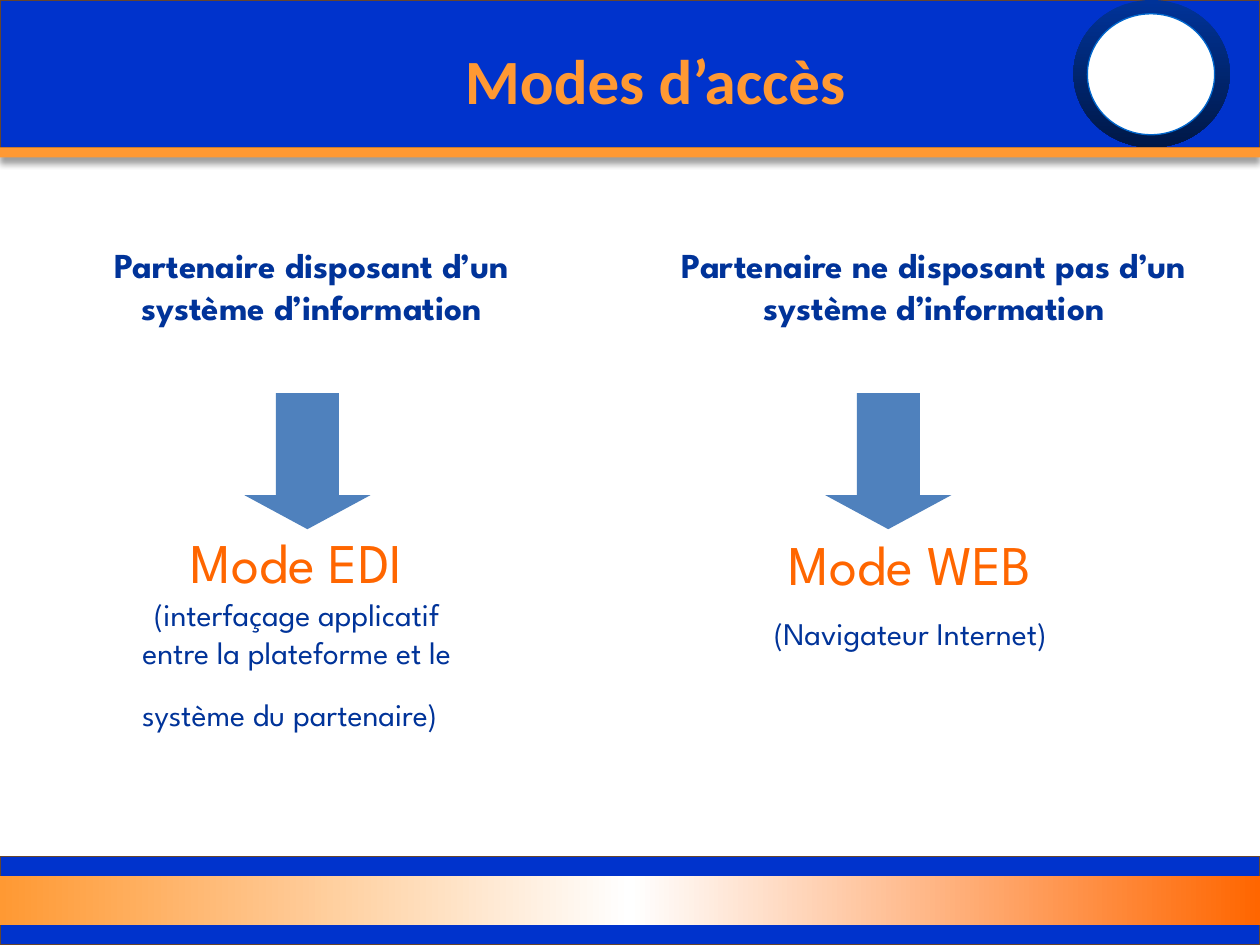
from lxml.etree import SubElement
from pptx import Presentation
from pptx.dml.color import RGBColor
from pptx.enum.shapes import MSO_SHAPE as Shape
from pptx.enum.text import MSO_ANCHOR as Anchor, PP_ALIGN as Align
from pptx.oxml.ns import qn
from pptx.util import Inches, Pt

WIDTH, HEIGHT = 10, 7.5
BLUE, NAVY, ORANGE, AMBER = "0033CC", "003399", "FF6600", "FF9933"
FONT = "League Spartan"
TITLE = "Modes d’accès"
BANDS = [
    (Shape.RECTANGLE, (0, 6.8, WIDTH, 0.7), BLUE, "67452D"),
    (Shape.RECTANGLE, (0, 6.95, WIDTH, 0.39), (0, [AMBER, "FFFFFF", ORANGE]), None),
    (Shape.RECTANGLE, (0, 0, WIDTH, 1.17), BLUE, "67452D"),
    (Shape.OVAL, (8.52, 0, 1.24, 1.17), (90, [NAVY, "001847"]), None),
    (Shape.OVAL, (8.63, 0.11, 1.01, 0.96), "FFFFFF", "0066CC"),
]
RULE = (0, 1.17, WIDTH, 0.08)
TEXTS = [
    ((0.39, 1.88, 4.17, 0.77),
     [[("Partenaire disposant d’un système d’information", 20, NAVY, True)]]),
    ((5, 1.88, 4.83, 0.77),
     [[("Partenaire ne disposant pas d’un système d’information", 20, NAVY, True)]]),
    ((0.94, 4.14, 2.83, 2.39),
     [[("Mode EDI ", 32, ORANGE, False),
       ("(interfaçage applicatif entre la plateforme et le système du partenaire)",
        18, NAVY, False),
       (" ", 32, ORANGE, False)]]),
    ((5.39, 4.15, 3.67, 1.09),
     [[("Mode WEB", 32, ORANGE, False)],
      [("(Navigateur Internet)", 18, NAVY, False)]]),
]
ARROW_LEFTS = [1.94, 6.55]


def color(value):
    return RGBColor.from_string(value)


def add_gradient(shape, angle, colors):
    shape.fill.gradient()
    gradient = shape.fill._xPr.find(qn("a:gradFill"))
    stops = gradient.find(qn("a:gsLst"))
    stops.clear()
    for index, value in enumerate(colors):
        position = str(100000 * index // (len(colors) - 1))
        stop = SubElement(stops, qn("a:gs"), pos=position)
        SubElement(stop, qn("a:srgbClr"), val=value)
    gradient.find(qn("a:lin")).set("ang", str(angle * 60000))


def add_shape(page, kind, area, fill, line=None):
    shape = page.shapes.add_shape(kind, *map(Inches, area))
    shape.shadow.inherit = False
    if isinstance(fill, tuple):
        add_gradient(shape, *fill)
    else:
        shape.fill.solid()
        shape.fill.fore_color.rgb = color(fill)
    if line:
        shape.line.color.rgb = color(line)
        shape.line.width = Pt(0.75)
    else:
        shape.line.fill.background()
    return shape


def add_shadow(shape):
    effects = shape._element.spPr.find(qn("a:effectLst"))
    shadow = SubElement(effects, qn("a:outerShdw"), blurRad=str(Pt(4)),
                        dist=str(Pt(3)), dir="5400000", rotWithShape="0")
    tint = SubElement(shadow, qn("a:srgbClr"), val="000000")
    SubElement(tint, qn("a:alpha"), val="40000")


def set_font(font, name, size, value, bold):
    font.name, font.size, font.bold = name, Pt(size), bold
    font.color.rgb = color(value)


def add_text(page, area, paragraphs):
    frame = page.shapes.add_textbox(*map(Inches, area)).text_frame
    frame.word_wrap = True
    for index, spans in enumerate(paragraphs):
        para = frame.add_paragraph() if index else frame.paragraphs[0]
        para.alignment = Align.CENTER
        if index:
            para.space_before = Pt(10)
        for text, *style in spans:
            span = para.add_run()
            span.text = text
            set_font(span.font, FONT, *style)


def add_title(page):
    title = page.shapes.title
    title.left, title.top, title.width, title.height = map(Inches, (1.8, 0.16, 6.8, 0.94))
    title.text_frame.text = TITLE
    title.text_frame.vertical_anchor = Anchor.MIDDLE
    para = title.text_frame.paragraphs[0]
    para.alignment = Align.CENTER
    set_font(para.font, "Calibri", 36, AMBER, True)
    page.shapes._spTree.append(title._element)


def main():
    """Build the access modes slide."""
    deck = Presentation()
    deck.slide_width, deck.slide_height = Inches(WIDTH), Inches(HEIGHT)
    page = deck.slides.add_slide(deck.slide_layouts[5])
    for band in BANDS:
        add_shape(page, *band)
    add_shadow(add_shape(page, Shape.RECTANGLE, RULE, AMBER))
    for area, paragraphs in TEXTS:
        add_text(page, area, paragraphs)
    for left in ARROW_LEFTS:
        arrow = add_shape(page, Shape.DOWN_ARROW, (left, 3.12, 1, 1.08), "4F81BD")
        arrow.adjustments[0], arrow.adjustments[1] = 0.5, 0.27
    add_title(page)
    deck.save("out.pptx")


if __name__ == "__main__":
    main()
